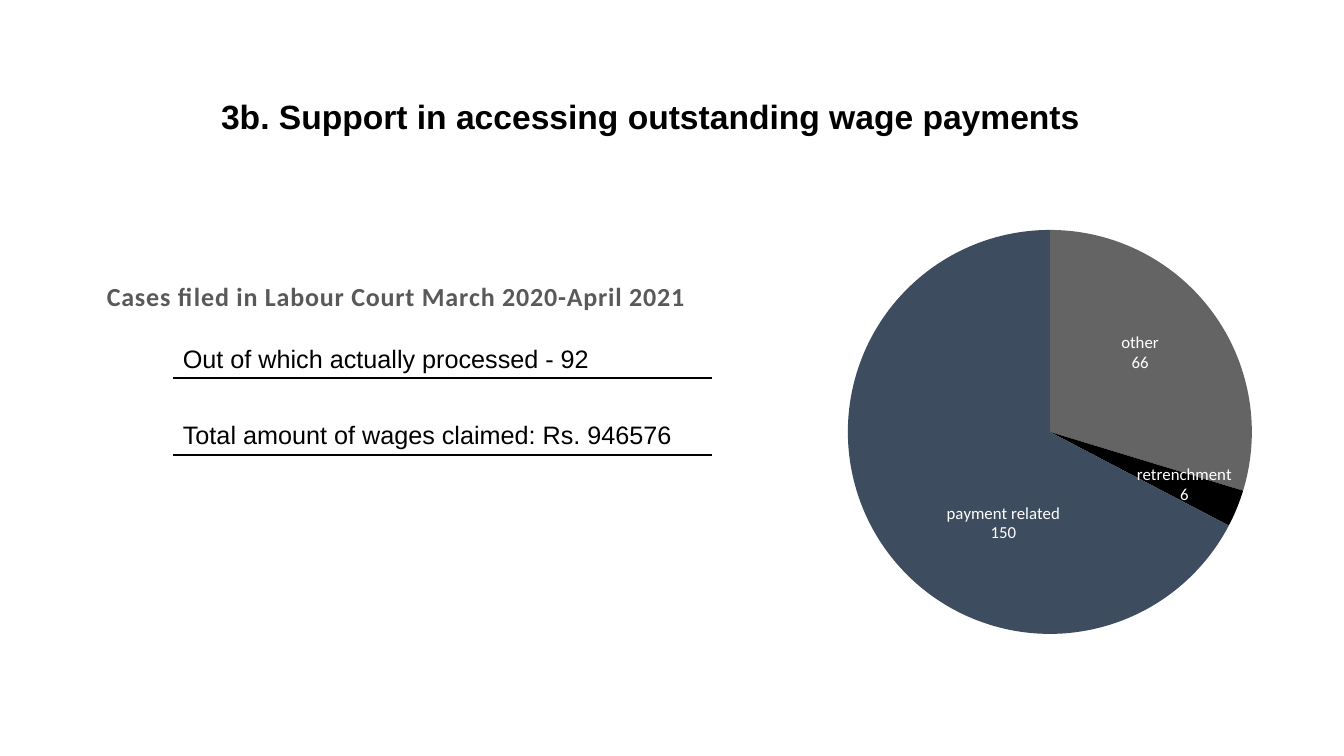
from lxml.etree import SubElement
from pptx import Presentation
from pptx.chart.data import CategoryChartData
from pptx.dml.color import RGBColor
from pptx.enum.chart import XL_CHART_TYPE, XL_LABEL_POSITION
from pptx.enum.shapes import MSO_CONNECTOR
from pptx.enum.text import MSO_ANCHOR, PP_ALIGN
from pptx.oxml import parse_xml
from pptx.oxml.ns import nsdecls, qn
from pptx.util import Emu, Pt

EMU_PER_PX = 914400 / 100.8
SLIDE_WIDTH, SLIDE_HEIGHT = 1344, 756
CHART_BOX = (93, 154, 1159, 480)
PIE_BOX = (755, 76, 404, 404)
CHART_TITLE_OFFSET = (9, 119)

# category, share, label count, slice colour, label shift from slice centre
CASES = [
    ("other", 30, 66, "646464", (9, -19)),
    ("retrenchment", 3, 6, "000000", (41, 15)),
    ("payment related", 68, 150, "3D4C5F", (40, 39)),
]
# text, top, width, underline height
FACTS = [
    ("Out of which actually processed - 92", 338, 460, 378),
    ("Total amount of wages claimed: Rs. 946576", 414, 538, 455),
]
FACT_LEFT, FACT_RIGHT = 173, 712


def px(length):
    return Emu(round(length * EMU_PER_PX))


def color(value):
    return RGBColor.from_string(value)


def format_text(text_frame, size, font_name, font_color, bold=False):
    for paragraph in text_frame.paragraphs:
        for run in paragraph.runs:
            run.font.size = Pt(size)
            run.font.name = font_name
            run.font.bold = bold
            run.font.color.rgb = color(font_color)


def set_layout(element, index, offset, size=None, absolute=True):
    """Give a chart element a manual layout, in px of the chart box."""
    for old_layout in element.findall(qn("c:layout")):
        element.remove(old_layout)
    layout = parse_xml(f"<c:layout {nsdecls('c')}><c:manualLayout/></c:layout>")
    entries = []
    if size:
        entries.append(("layoutTarget", "inner"))
    if absolute:
        entries += [("xMode", "edge"), ("yMode", "edge")]
    chart_size = CHART_BOX[2:]
    lengths = zip("xywh", (*offset, *(size or ())), chart_size * 2)
    entries += [(name, f"{length / total:.4f}") for name, length, total in lengths]
    for name, value in entries:
        SubElement(layout[0], qn(f"c:{name}")).set("val", value)
    element.insert(index, layout)


def add_title(slide, text):
    title = slide.shapes.title
    title.left, title.top, title.width, title.height = map(px, (211, 46, 1277, 146))
    title.text_frame.text = text
    title.text_frame.vertical_anchor = MSO_ANCHOR.MIDDLE
    paragraph = title.text_frame.paragraphs[0]
    paragraph.alignment = PP_ALIGN.LEFT
    paragraph.line_spacing = 0.9
    format_text(title.text_frame, 24, "Arial", "000000", bold=True)


def add_chart_title(chart, text):
    text_frame = chart.chart_title.text_frame
    text_frame.text = text
    format_text(text_frame, 18.6, "Calibri", "595959", bold=True)
    text_frame.paragraphs[0].runs[0].font._element.set("spc", "50")
    set_layout(chart.element.xpath(".//c:title")[0], 1, CHART_TITLE_OFFSET)


def add_cases_pie(slide):
    chart_data = CategoryChartData()
    chart_data.categories = [case[0] for case in CASES]
    chart_data.add_series("Series 1", [case[1] for case in CASES])
    frame = slide.shapes.add_chart(XL_CHART_TYPE.PIE, *map(px, CHART_BOX), chart_data)
    chart = frame.chart
    chart.has_legend = False
    chart.font.size = Pt(10)
    chart.font.name = "Arial"
    chart.font.color.rgb = color("000000")
    add_chart_title(chart, "Cases filed in Labour Court March 2020-April 2021")

    plot = chart.plots[0]
    plot.vary_by_categories = True
    for index, (category, _, count, fill, _) in enumerate(CASES):
        point = plot.series[0].points[index]
        point.format.fill.solid()
        point.format.fill.fore_color.rgb = color(fill)
        point.format.line.fill.background()
        label = point.data_label
        label.text_frame.text = f"{category}\n{count}"
        format_text(label.text_frame, 12, "Calibri", "FFFFFF")
        label.position = XL_LABEL_POSITION.CENTER
    for label_element, case in zip(chart.element.xpath(".//c:dLbl"), CASES):
        set_layout(label_element, 1, case[4], absolute=False)
    set_layout(chart.element.xpath(".//c:plotArea")[0], 0, PIE_BOX[:2], PIE_BOX[2:])


def add_fact(slide, text, top, width):
    box = slide.shapes.add_textbox(px(FACT_LEFT), px(top), px(width), px(40))
    box.text_frame.word_wrap = True
    box.text_frame.text = text
    format_text(box.text_frame, 18, "Arial", "000000")


def add_underline(slide, y):
    line = slide.shapes.add_connector(
        MSO_CONNECTOR.STRAIGHT, px(FACT_LEFT), px(y), px(FACT_RIGHT), px(y)
    )
    line.line.color.rgb = color("000000")
    line.line.width = Pt(0.75)
    SubElement(line._element.spPr, qn("a:effectLst"))


def main():
    presentation = Presentation()
    presentation.slide_width = px(SLIDE_WIDTH)
    presentation.slide_height = px(SLIDE_HEIGHT)
    slide = presentation.slides.add_slide(presentation.slide_layouts[5])
    add_title(slide, "3b. Support in accessing outstanding wage payments")
    add_cases_pie(slide)
    for text, top, width, underline in FACTS:
        add_fact(slide, text, top, width)
        add_underline(slide, underline)
    presentation.save("out.pptx")


if __name__ == "__main__":
    main()
